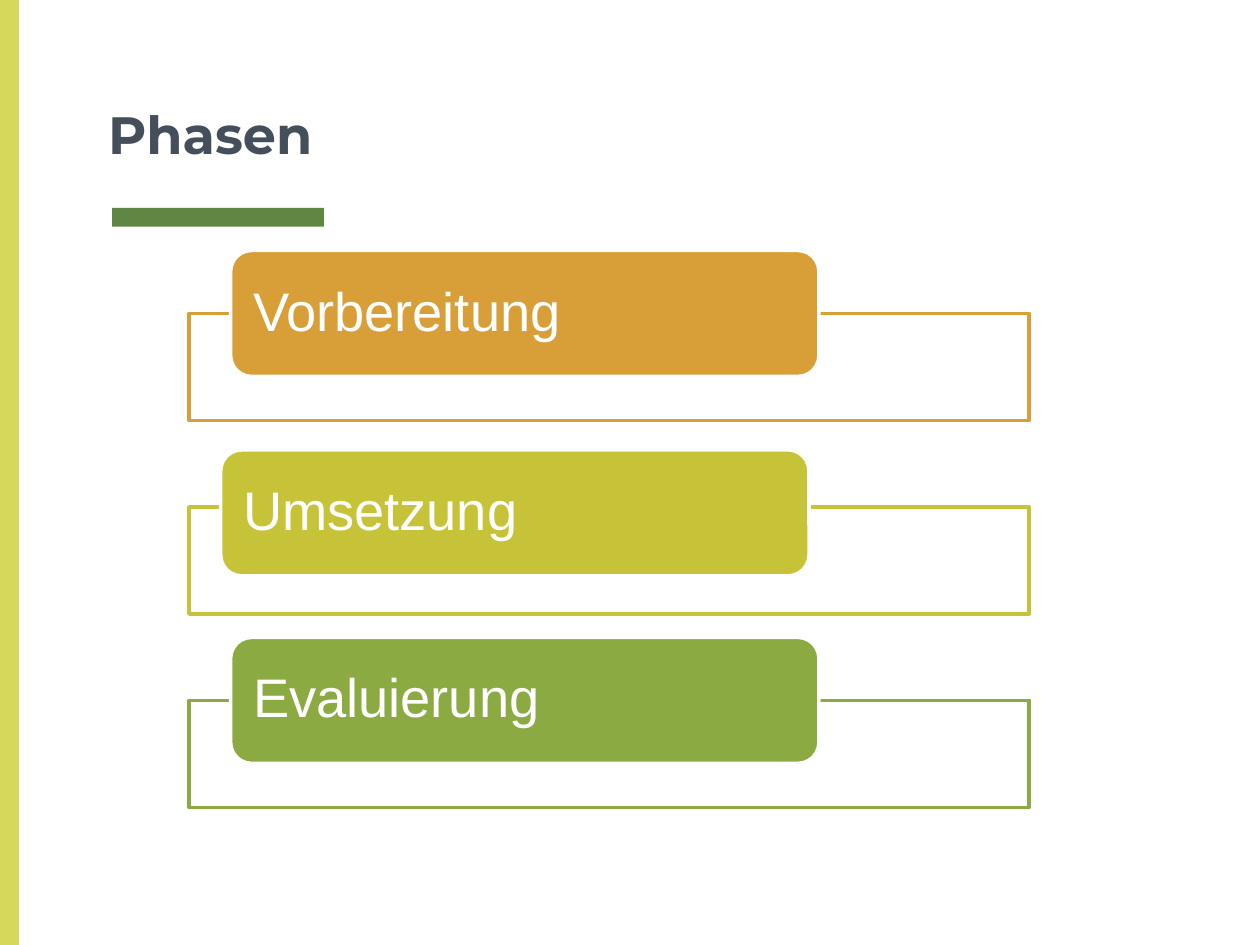
"""Build the slide that lists the three project phases."""
from dataclasses import dataclass

import pptx
import pptx.dml.color
import pptx.enum.shapes
import pptx.enum.text
import pptx.util

Cm = pptx.util.Cm
Pt = pptx.util.Pt
SHAPES = pptx.enum.shapes.MSO_SHAPE
ANCHORS = pptx.enum.text.MSO_ANCHOR

COLOURS = {
    "white": "FFFFFF",
    "title": "454F5B",
    "stripe": "D5D85A",
    "underline": "608643",
    "orange": "D89F39",
    "lime": "C7C338",
    "green": "8BAB42",
}
FRAME_TOP = 6.32
FRAME_PITCH = 3.9


@dataclass
class Phase:
    """A phase with its colour and the position of its label in cm."""

    name: str
    colour: str
    left: float
    top: float


PHASES = [
    Phase("Vorbereitung", "orange", 4.65, 5.05),
    Phase("Umsetzung", "lime", 4.45, 9.07),
    Phase("Evaluierung", "green", 4.65, 12.85),
]


def colour_of(name: str) -> pptx.dml.color.RGBColor:
    """Return the named colour."""
    return pptx.dml.color.RGBColor.from_string(COLOURS[name])


def add_block(page, kind, left: float, top: float, width: float, height: float,
              fill: str, line: str | None = None):
    """Draw a filled shape, measured in cm, with an optional outline."""
    block = page.shapes.add_shape(kind, Cm(left), Cm(top), Cm(width), Cm(height))
    block.shadow.inherit = False
    block.fill.solid()
    block.fill.fore_color.rgb = colour_of(fill)
    if line:
        block.line.color.rgb = colour_of(line)
        block.line.width = Pt(2)
    else:
        block.line.fill.background()
    return block


def write_text(box, text: str, font: str, size: int, colour: str,
               anchor, side: float, edge: float):
    """Write one left-aligned paragraph and return it."""
    frame = box.text_frame
    frame.word_wrap = True
    frame.vertical_anchor = anchor
    frame.margin_left = frame.margin_right = Cm(side)
    frame.margin_top = frame.margin_bottom = Cm(edge)
    para = frame.paragraphs[0]
    para.text = text
    para.alignment = pptx.enum.text.PP_ALIGN.LEFT
    para.font.name = font
    para.font.size = Pt(size)
    para.font.color.rgb = colour_of(colour)
    return para


def add_phase(page, phase: Phase, index: int) -> None:
    """Draw the frame of a phase and the label that overlaps it."""
    add_block(page, SHAPES.RECTANGLE, 3.81, FRAME_TOP + index * FRAME_PITCH,
              16.94, 2.16, "white", phase.colour)
    label = add_block(page, SHAPES.ROUNDED_RECTANGLE, phase.left, phase.top,
                      11.86, 2.54, phase.colour, "white")
    para = write_text(label, phase.name, "Arial", 31, "white", ANCHORS.MIDDLE, 0.33, 0)
    para.line_spacing = 0.9


def main() -> None:
    """Build and save the deck."""
    deck = pptx.Presentation()
    deck.slide_width, deck.slide_height = Cm(25.4), Cm(19.05)
    page = deck.slides.add_slide(deck.slide_layouts[6])
    add_block(page, SHAPES.RECTANGLE, 2.26, 4.19, 4.27, 0.38, "underline")
    add_block(page, SHAPES.RECTANGLE, 0, 0, 0.38, 19.05, "stripe")
    title = page.shapes.add_textbox(Cm(1.93), Cm(0), Cm(21.56), Cm(3.58))
    para = write_text(title, "Phasen", "Montserrat", 30, "title",
                      ANCHORS.BOTTOM, 0.25, 0.25)
    para.font.bold = True
    for index, phase in enumerate(PHASES):
        add_phase(page, phase, index)
    deck.save("out.pptx")


if __name__ == "__main__":
    main()
